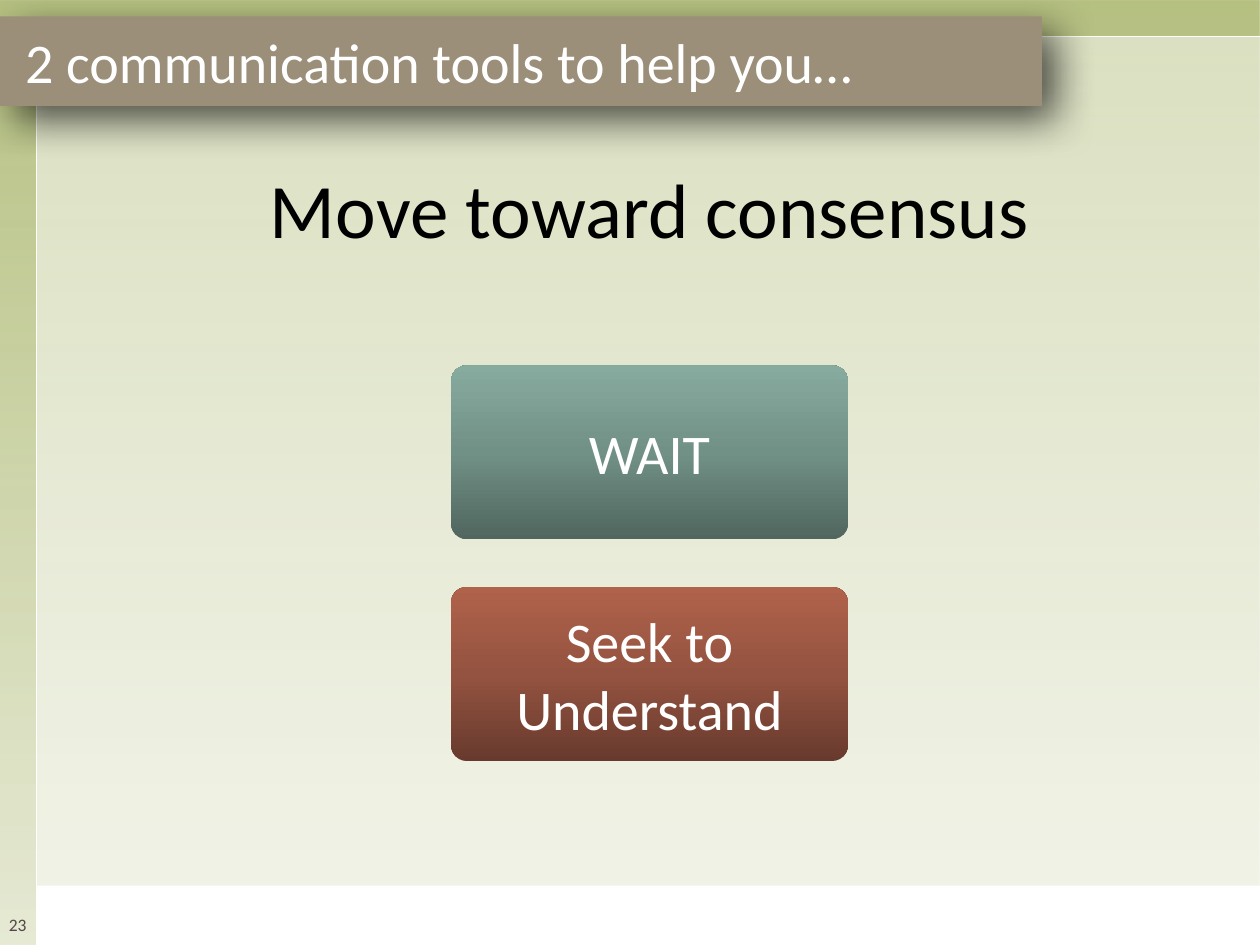
from lxml.etree import SubElement
from pptx import Presentation
from pptx.dml.color import RGBColor
from pptx.enum.shapes import MSO_SHAPE
from pptx.enum.text import MSO_ANCHOR, PP_ALIGN
from pptx.oxml.ns import qn
from pptx.util import Inches, Pt

COLORS = {
    "white": "FFFFFF", "black": "000000", "olive": "9EAC58",
    "taupe": "9B8F79", "number": "514746",
}
TOOLS = [
    ("WAIT", ["50665E", "719086", "87AB9F"]),
    ("Seek to Understand", ["683A2D", "945340", "B0624B"]),
]


def add_color(parent, color, alpha=100):
    """Append an RGB colour with its opacity in percent."""
    clr = SubElement(parent, qn("a:srgbClr"), val=color)
    if alpha < 100:
        SubElement(clr, qn("a:alpha"), val=str(alpha * 1000))


def set_gradient(sp, colors, angle, alphas=(100, 100, 100)):
    """Fill a shape with evenly spaced gradient stops."""
    sp.fill.gradient()
    grad = sp._element.spPr.find(qn("a:gradFill"))
    for child in list(grad):
        grad.remove(child)
    stops = SubElement(grad, qn("a:gsLst"))
    for i, (color, alpha) in enumerate(zip(colors, alphas)):
        add_color(SubElement(stops, qn("a:gs"), pos=str(i * 50000)), color, alpha)
    SubElement(grad, qn("a:lin"), ang=str(angle * 60000), scaled="0")


def set_solid(sp, color, alpha=100):
    """Fill a shape with one colour of the given opacity."""
    sp.fill.solid()
    fill = sp._element.spPr.find(qn("a:solidFill"))
    for child in list(fill):
        fill.remove(child)
    add_color(fill, color, alpha)


def add_box(s, x, y, w, h, kind=MSO_SHAPE.RECTANGLE):
    """Add a preset shape without line or shadow."""
    sp = s.shapes.add_shape(kind, Inches(x), Inches(y), Inches(w), Inches(h))
    sp.shadow.inherit = False
    sp.line.fill.background()
    return sp


def set_text(sp, text, size, color, align=PP_ALIGN.CENTER, anchor=MSO_ANCHOR.MIDDLE):
    """Write one formatted paragraph into a shape."""
    tf = sp.text_frame
    tf.word_wrap = True
    tf.vertical_anchor = anchor
    tf.text = text
    p = tf.paragraphs[0]
    p.alignment = align
    font = p.runs[0].font
    font.name = "Calibri"
    font.size = Pt(size)
    font.color.rgb = RGBColor.from_string(color)


def add_backdrop(s):
    """Draw the green frame, the pale panel and the white footer."""
    frame = add_box(s, -0.01, 0, 10.01, 7.5)
    set_gradient(frame, [COLORS["olive"]] * 3, 90, (75, 50, 25))
    panel = add_box(s, 0.29, 0.29, 9.72, 7.2)
    set_solid(panel, COLORS["white"], 50)
    panel.line.color.rgb = RGBColor.from_string(COLORS["white"])
    panel.line.width = Pt(1)
    set_solid(add_box(s, 0.29, 7.03, 9.72, 0.47), COLORS["white"])


def add_number(s, text):
    """Put the slide number in the lower left corner."""
    sp = s.shapes.add_textbox(0, Inches(7.03), Inches(0.28), Inches(0.47))
    set_text(sp, text, 10, COLORS["number"], anchor=MSO_ANCHOR.BOTTOM)
    tf = sp.text_frame
    tf.margin_left = tf.margin_right = 0
    tf.margin_top, tf.margin_bottom = Inches(0.04), Inches(0.08)


def place_title(s, text):
    """Move the title above the backdrop and format it."""
    title = s.shapes.title
    title.left, title.top = Inches(0.58), Inches(1.02)
    title.width, title.height = Inches(9.15), Inches(1.25)
    set_text(title, text, 44, COLORS["black"])
    s.shapes._spTree.append(title._element)


def add_banner(s, text):
    """Add the heading strip with its soft shadow."""
    sp = add_box(s, 0, 0.13, 8.27, 0.71)
    set_solid(sp, COLORS["taupe"])
    set_text(sp, text, 32, COLORS["white"], PP_ALIGN.LEFT)
    sp.text_frame.margin_left = Inches(0.2)
    effects = sp._element.spPr.find(qn("a:effectLst"))
    shadow = SubElement(effects, qn("a:outerShdw"), blurRad=str(Pt(23)),
                        dist=str(Pt(11)), dir=str(45 * 60000), rotWithShape="0")
    add_color(shadow, COLORS["black"], 65)


def add_tool(s, y, text, colors):
    """Add one rounded tool button."""
    sp = add_box(s, 3.58, y, 3.15, 1.38, MSO_SHAPE.ROUNDED_RECTANGLE)
    sp.adjustments[0] = 0.09
    set_gradient(sp, colors, 270)
    set_text(sp, text, 32, COLORS["white"])


def main():
    """Build and save the slide."""
    prs = Presentation()
    prs.slide_width, prs.slide_height = Inches(10), Inches(7.5)
    s = prs.slides.add_slide(prs.slide_layouts[5])
    add_backdrop(s)
    add_number(s, "23")
    place_title(s, "Move toward consensus")
    add_banner(s, "2 communication tools to help you…")
    for i, (text, colors) in enumerate(TOOLS):
        add_tool(s, 2.9 + i * 1.76, text, colors)
    prs.save("out.pptx")


if __name__ == "__main__":
    main()
